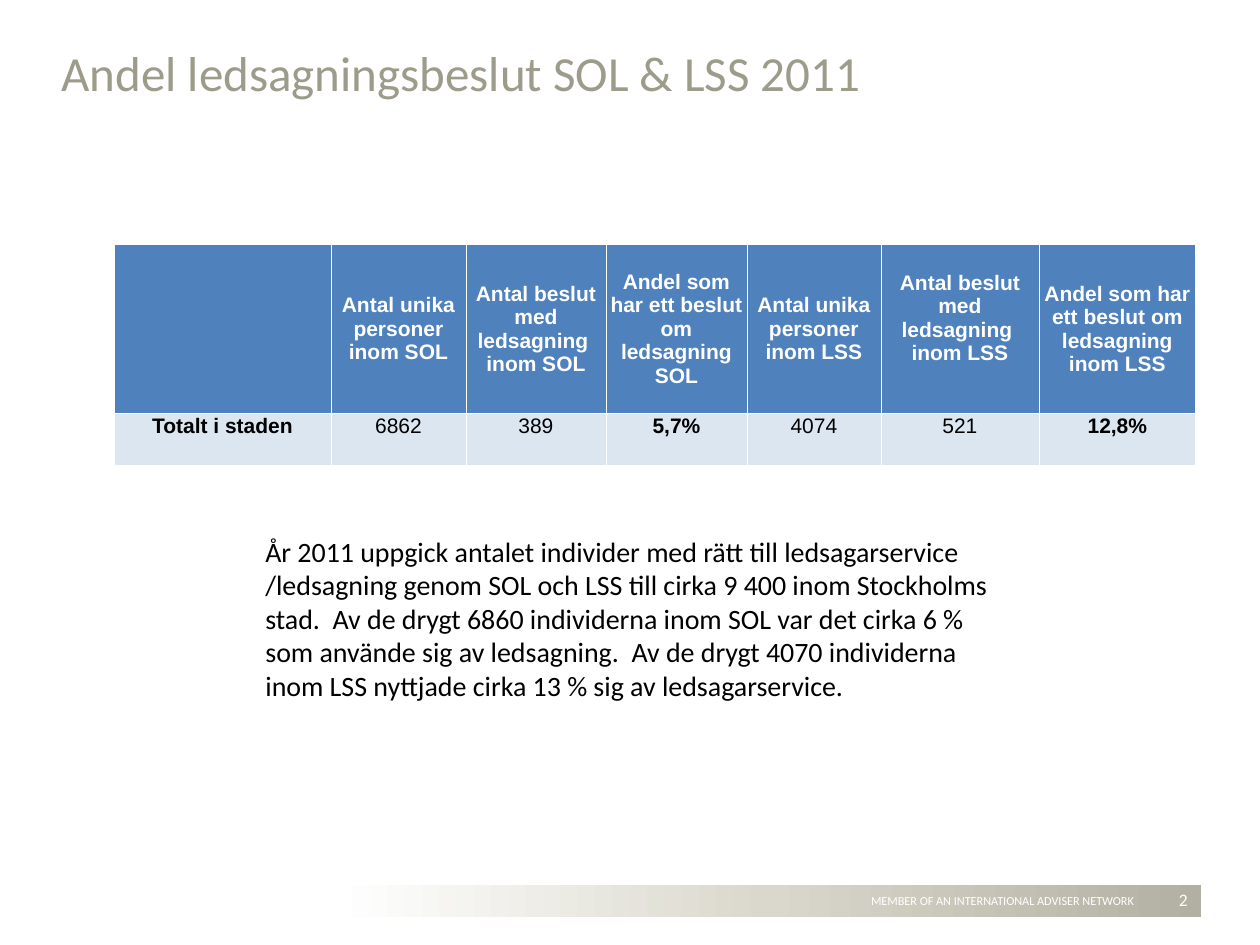
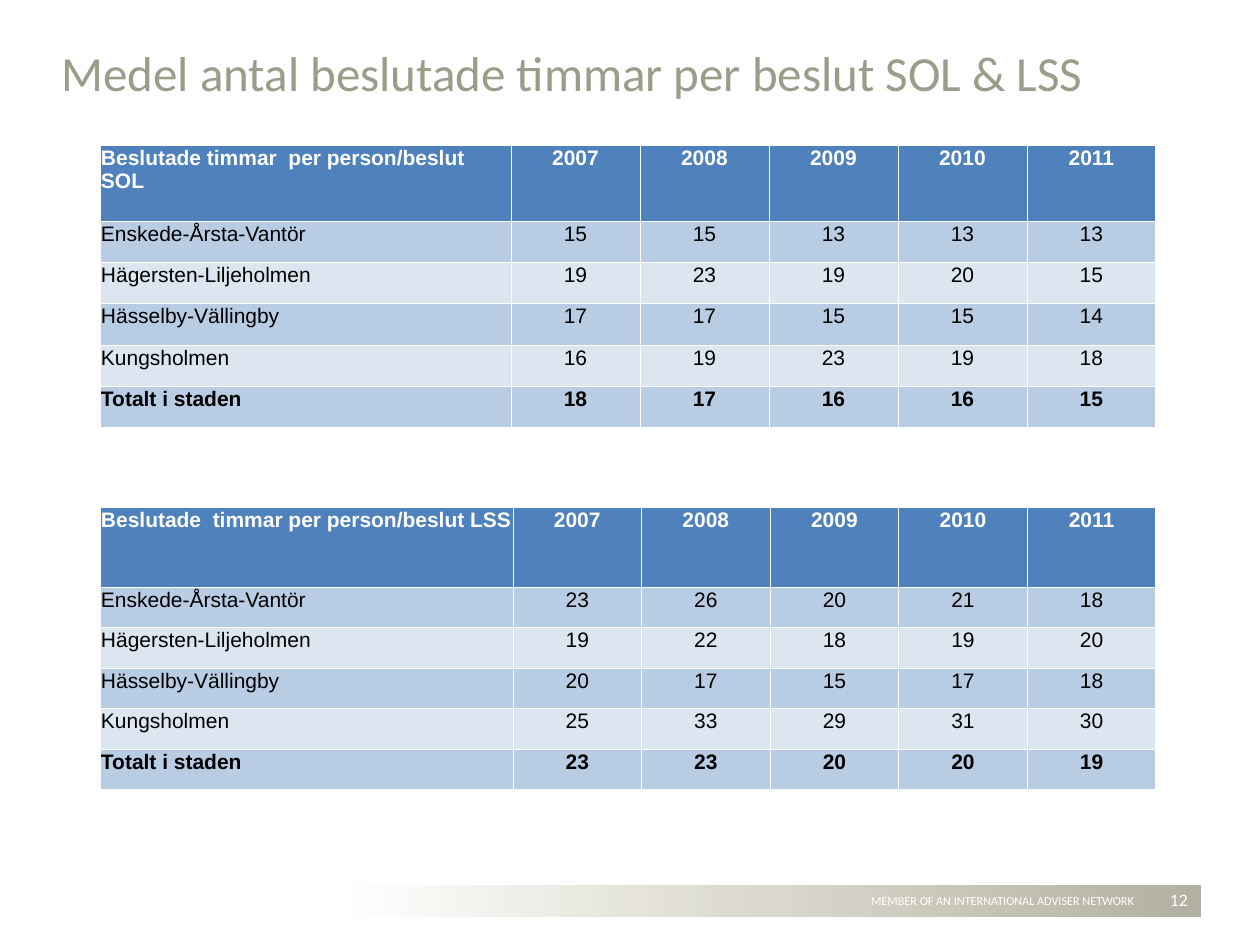
from copy import deepcopy

from lxml import etree
from pptx import Presentation
from pptx import util as u
from pptx.dml.color import RGBColor
from pptx.enum import shapes, text
from pptx.oxml import ns

PX_PER_INCH = 126
TITLE_GREY, WHITE, BLACK = "9D9B8A", "FFFFFF", "000000"
HEADER_BLUE, MID_BLUE, PALE_BLUE = "4F81BD", "B8CCE4", "DCE6F1"
BAND_GRADIENT = [(0, "B2B0A2"), (0.5, "DAD8CC"), (1, "FFFFFF")]
NETWORK = "MEMBER OF AN INTERNATIONAL ADVISER NETWORK"
LEFT, CENTER, RIGHT = text.PP_ALIGN.LEFT, text.PP_ALIGN.CENTER, text.PP_ALIGN.RIGHT
TOP, MIDDLE = text.MSO_ANCHOR.TOP, text.MSO_ANCHOR.MIDDLE

SHARE_TITLE = "Andel ledsagningsbeslut SOL & LSS 2011"
SHARE_ROWS = [
    ["", "Antal unika personer inom SOL", "Antal beslut med ledsagning  inom SOL",
     "Andel som har ett beslut om ledsagning SOL", "Antal unika personer inom LSS",
     "Antal beslut med ledsagning  inom LSS",
     "Andel som har ett beslut om ledsagning inom LSS"],
    ["Totalt i staden", "6862", "389", "5,7%", "4074", "521", "12,8%"],
]
SHARE_COLUMNS = [217, 135, 140, 141, 134, 158, 157]
SHARE_COMMENT = (
    "År 2011 uppgick antalet individer med rätt till ledsagarservice /ledsagning "
    "genom SOL och LSS till cirka 9 400 inom Stockholms stad.  Av de drygt 6860 "
    "individerna inom SOL var det cirka 6 % som använde sig av ledsagning.  Av de "
    "drygt 4070 individerna inom LSS nyttjade cirka 13 % sig av ledsagarservice.")

HOURS_TITLE = "Medel antal beslutade timmar per beslut SOL & LSS"
YEARS = [2007, 2008, 2009, 2010, 2011]
DISTRICTS = ["Enskede-Årsta-Vantör", "Hägersten-Liljeholmen", "Hässelby-Vällingby",
             "Kungsholmen", "Totalt i staden"]
HOURS_WIDTH, HOURS_HEIGHT = 1056, 283
HOURS = [
    {"heading": "Beslutade timmar  per person/beslut SOL",
     "top": 145, "header": 76, "first_column": 411,
     "values": [[15, 15, 13, 13, 13], [19, 23, 19, 20, 15], [17, 17, 15, 15, 14],
                [16, 19, 23, 19, 18], [18, 17, 16, 16, 15]]},
    {"heading": "Beslutade  timmar per person/beslut LSS",
     "top": 507, "header": 80, "first_column": 413,
     "values": [[23, 26, 20, 21, 18], [19, 22, 18, 19, 20], [20, 17, 15, 17, 18],
                [25, 33, 29, 31, 30], [23, 23, 20, 20, 19]]},
]


def px(length):
    return u.Emu(round(length * u.Inches(1) / PX_PER_INCH))


def rgb(value):
    return RGBColor.from_string(value)


def write(frame, words, size, color, font="Calibri", bold=False, align=LEFT):
    paragraph = frame.paragraphs[0]
    paragraph.alignment = align
    run = paragraph.add_run()
    run.text = words
    run.font.size, run.font.name, run.font.bold = u.Pt(size), font, bold
    run.font.color.rgb = rgb(color)


def add_words(slide, box, words, size, color, align=LEFT, anchor=TOP, wrap=True):
    label = slide.shapes.add_textbox(*map(px, box))
    frame = label.text_frame
    frame.word_wrap, frame.vertical_anchor = wrap, anchor
    write(frame, words, size, color, align=align)
    return label


def add_footer_to_layout(slide):
    """Build the gradient band and its label, then move both to the layout."""
    band = slide.shapes.add_shape(shapes.MSO_SHAPE.RECTANGLE, *map(px, (335, 885, 866, 32)))
    band.shadow.inherit = False
    band.line.fill.background()
    band.fill.gradient()
    band.fill.gradient_angle = 180
    stops = band.element.spPr.find(".//" + ns.qn("a:gsLst"))
    stops.append(deepcopy(stops[-1]))
    for stop, (position, color) in zip(band.fill.gradient_stops, BAND_GRADIENT):
        stop.position, stop.color.rgb = position, rgb(color)
    network = add_words(slide, (838, 887, 329, 28), NETWORK, 7, WHITE, CENTER, wrap=False)
    for part in (band, network):
        slide.slide_layout.shapes.element.append(part.element)


def add_slide(deck, layout, title, title_width, number):
    slide = deck.slides.add_slide(layout)
    heading = slide.shapes.title
    heading.left, heading.top, heading.width, heading.height = map(px, (49, 9, title_width, 99))
    frame = heading.text_frame
    frame.auto_size, frame.vertical_anchor = text.MSO_AUTO_SIZE.NONE, text.MSO_ANCHOR.BOTTOM
    write(frame, title, 28, TITLE_GREY)
    add_words(slide, (1142, 883, 58, 32), number, 10, WHITE, RIGHT, MIDDLE)
    return slide


def draw_white_borders(frame):
    for properties in frame.element.iter(ns.qn("a:tcPr")):
        for index, side in enumerate(("lnL", "lnR", "lnT", "lnB")):
            line = etree.Element(ns.qn("a:" + side), w=str(u.Pt(0.5)))
            fill = etree.SubElement(line, ns.qn("a:solidFill"))
            etree.SubElement(fill, ns.qn("a:srgbClr"), val=WHITE)
            properties.insert(index, line)


def add_grid(slide, left, top, columns, heights, rows, bands, is_bold,
             first_align=LEFT, header_anchor=TOP):
    """Add a table; is_bold(row, column) tells which body cells are bold."""
    frame = slide.shapes.add_table(len(rows), len(columns), px(left), px(top),
                                   px(sum(columns)), px(sum(heights)))
    grid = frame.table
    grid.first_row = grid.horz_banding = False
    for column, width in zip(grid.columns, columns):
        column.width = px(width)
    for r, row in enumerate(rows):
        grid.rows[r].height = px(heights[r])
        header = r == 0
        for c, value in enumerate(row):
            cell = grid.cell(r, c)
            cell.margin_left = cell.margin_right = cell.margin_top = px(1)
            cell.margin_bottom = 0
            cell.vertical_anchor = header_anchor if header else TOP
            cell.fill.solid()
            cell.fill.fore_color.rgb = rgb(HEADER_BLUE if header else bands[(r - 1) % len(bands)])
            if value != "":
                write(cell.text_frame, str(value), 12, WHITE if header else BLACK, "Arial",
                      header or is_bold(r, c), CENTER if c else first_align)
    draw_white_borders(frame)
    return grid


def main():
    deck = Presentation()
    deck.slide_width, deck.slide_height = u.Inches(10), u.Inches(7.5)
    layout = deck.slide_layouts.get_by_name("Title Only")

    share = add_slide(deck, layout, SHARE_TITLE, 1045, "2")
    add_footer_to_layout(share)
    share_grid = add_grid(share, 114, 244, SHARE_COLUMNS, [169, 52], SHARE_ROWS, [PALE_BLUE],
                          lambda r, c: c % 3 == 0, CENTER, MIDDLE)
    share_grid.cell(0, 5).margin_bottom = px(22)
    add_words(share, (253, 528, 753, 183), SHARE_COMMENT, 16, BLACK)

    hours = add_slide(deck, layout, HOURS_TITLE, 1176, "12")
    for group in HOURS:
        rows = [[group["heading"], *YEARS]]
        rows += [[name, *values] for name, values in zip(DISTRICTS, group["values"])]
        year_width = (HOURS_WIDTH - group["first_column"]) / len(YEARS)
        row_height = (HOURS_HEIGHT - group["header"]) / len(DISTRICTS)
        add_grid(hours, 100, group["top"],
                 [group["first_column"]] + [year_width] * len(YEARS),
                 [group["header"]] + [row_height] * len(DISTRICTS),
                 rows, [MID_BLUE, PALE_BLUE], lambda r, c: r == len(DISTRICTS))

    deck.save("out.pptx")


if __name__ == "__main__":
    main()
